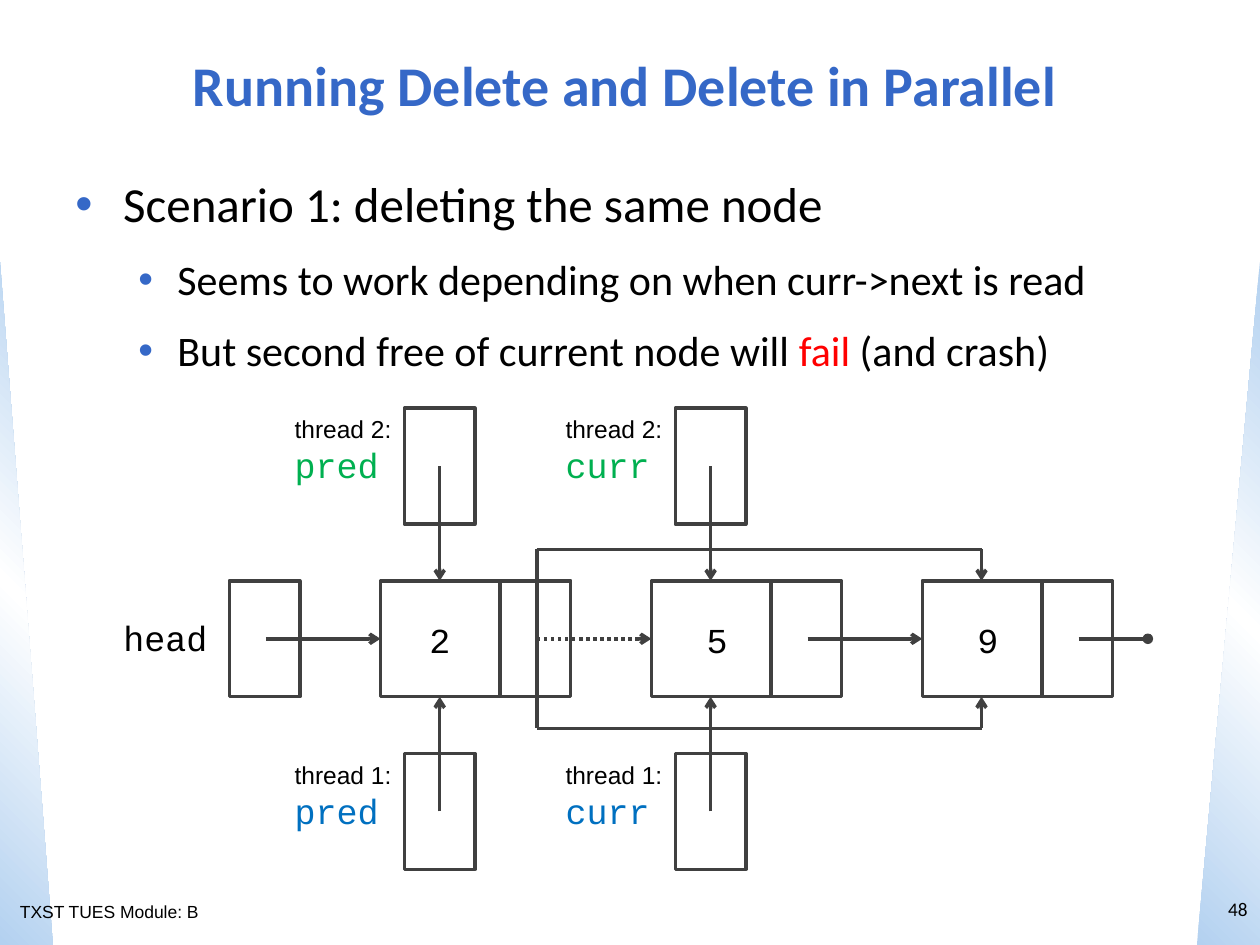
from lxml import etree
from pptx import Presentation
from pptx.dml.color import RGBColor
from pptx.enum.dml import MSO_LINE
from pptx.enum.shapes import MSO_CONNECTOR, MSO_SHAPE
from pptx.enum.text import MSO_ANCHOR, PP_ALIGN
from pptx.oxml import parse_xml
from pptx.oxml.ns import nsdecls, qn
from pptx.util import Inches, Pt

BLACK = RGBColor(0x00, 0x00, 0x00)
TITLE_BLUE = RGBColor(0x35, 0x68, 0xC7)
RED = RGBColor(0xFF, 0x00, 0x00)
GREEN = RGBColor(0x00, 0xB0, 0x50)
THREAD_BLUE = RGBColor(0x00, 0x70, 0xC0)
OUTLINE = RGBColor(0x40, 0x40, 0x40)
PALE_BLUE = RGBColor(0xB3, 0xD1, 0xF0)
WHITE = RGBColor(0xFF, 0xFF, 0xFF)

# List geometry in inches
DATA_W, POINTER_W, CELL_H = 0.95, 0.56, 0.92
NODE_STEP = 2.15
NEXT_X = 1.24  # start of a next-pointer, from the left of its node


def add_text(slide, box, *paragraphs, size=20, font="Calibri", color=BLACK,
             bold=False, align=PP_ALIGN.LEFT, anchor=MSO_ANCHOR.TOP, wrap=True):
    """Each paragraph is a list of (text, overrides) runs."""
    frame = slide.shapes.add_textbox(*map(Inches, box)).text_frame
    frame.word_wrap = wrap
    frame.vertical_anchor = anchor
    for index, runs in enumerate(paragraphs):
        paragraph = frame.paragraphs[0] if index == 0 else frame.add_paragraph()
        paragraph.alignment = align
        for text, override in runs:
            run = paragraph.add_run()
            run.text = text
            run.font.size = Pt(override.get("size", size))
            run.font.name = override.get("font", font)
            run.font.color.rgb = override.get("color", color)
            run.font.bold = bold
    return frame


def add_bullet(paragraph, margin, hanging):
    props = paragraph._p.get_or_add_pPr()
    props.set("marL", str(Inches(margin)))
    props.set("indent", str(-Inches(hanging)))
    bullet_color = etree.SubElement(props, qn("a:buClr"))
    etree.SubElement(bullet_color, qn("a:srgbClr"), val=str(TITLE_BLUE))
    etree.SubElement(props, qn("a:buFont"), typeface="Arial")
    etree.SubElement(props, qn("a:buChar"), char="•")


def add_cell(slide, left, top, width=POINTER_W):
    cell = slide.shapes.add_shape(
        MSO_SHAPE.RECTANGLE, *map(Inches, (left, top, width, CELL_H)))
    cell.shadow.inherit = False
    cell.fill.background()
    cell.line.color.rgb = OUTLINE
    cell.line.width = Pt(2)


def add_line(slide, start, end, tip=None, dash=None):
    connector = slide.shapes.add_connector(
        MSO_CONNECTOR.STRAIGHT, *map(Inches, (*start, *end)))
    connector.line.color.rgb = OUTLINE
    connector.line.width = Pt(2)
    if dash:
        connector.line.dash_style = dash
    if tip:
        etree.SubElement(connector.line._get_or_add_ln(), qn("a:tailEnd"), type=tip)
    etree.SubElement(connector._element.spPr, qn("a:effectLst"))


def add_side_wedge(slide, box, angle, flipped=False):
    wedge = slide.shapes.add_shape(MSO_SHAPE.RIGHT_TRIANGLE, *map(Inches, box))
    wedge.shadow.inherit = False
    wedge.line.fill.background()
    wedge.fill.background()
    stops = "".join(
        f'<a:gs pos="{pos}"><a:srgbClr val="{color}"/></a:gs>'
        for pos, color in ((0, PALE_BLUE), (50000, WHITE), (100000, PALE_BLUE)))
    gradient = parse_xml(
        f'<a:gradFill {nsdecls("a")} rotWithShape="1"><a:gsLst>{stops}</a:gsLst>'
        f'<a:lin ang="{angle * 60000}" scaled="0"/></a:gradFill>')
    props = wedge._element.spPr
    props.replace(props.find(qn("a:noFill")), gradient)
    if flipped:
        props.find(qn("a:xfrm")).set("flipH", "1")


def add_body(slide, box):
    body = add_text(
        slide, box,
        [("Scenario 1: deleting the same node", {"size": 28})],
        [("Seems to work depending on when curr->next is read", {})],
        [("But second free of current node will ", {}), ("fail", {"color": RED}),
         (" (and crash)", {})],
        size=24)
    heading, *details = body.paragraphs
    add_bullet(heading, 0.38, 0.38)
    for detail in details:
        add_bullet(detail, 0.81, 0.31)
        detail.level = 1
        detail.space_before = Pt(12)


def add_thread_row(slide, left, top, thread, color, list_edge):
    """Pred and curr of one thread, each pointing at its node."""
    for index, variable in enumerate(("pred", "curr")):
        label_x = left + index * NODE_STEP
        cell_x = label_x + 0.97
        add_text(slide, (label_x, top, 0.97, 0.67),
                 [(f"thread {thread}:", {"size": 14, "font": "Arial"})],
                 [(variable, {"color": color})],
                 font="Courier New", wrap=False)
        add_cell(slide, cell_x, top)
        center = cell_x + POINTER_W / 2
        add_line(slide, (center, top + CELL_H / 2), (center, list_edge), "arrow")


def add_linked_list(slide, left, top):
    """Head pointer, three nodes and the two routes around node 5."""
    middle, bottom = top + CELL_H / 2, top + CELL_H
    first = left + 2.14

    # Head pointer
    add_text(slide, (left, top + 0.23, 0.88, 0.44), [("head", {})],
             font="Courier New", wrap=False)
    add_cell(slide, left + 0.94, top)
    add_line(slide, (left + 1.23, middle), (first, middle), "arrow")

    # Nodes with their next pointers
    nodes = (("2", 0.29, NODE_STEP, "arrow", MSO_LINE.ROUND_DOT),
             ("5", 0.34, NODE_STEP, "arrow", None),
             ("9", 0.34, 1.79, "oval", None))
    for index, (value, value_x, reach, tip, dash) in enumerate(nodes):
        node_x = first + index * NODE_STEP
        add_cell(slide, node_x, top, DATA_W)
        add_cell(slide, node_x + DATA_W, top)
        add_line(slide, (node_x + NEXT_X, middle), (node_x + reach, middle), tip, dash)
        add_text(slide, (node_x + value_x, top + 0.25, 0.37, 0.44), [(value, {})],
                 font="Courier New", wrap=False)

    # Rerouted next pointer of node 2, once for each thread
    start_x, end_x = first + NEXT_X, first + 2 * NODE_STEP + 0.47
    for route_y, edge in ((top - 0.25, top), (bottom + 0.25, bottom)):
        add_line(slide, (start_x, middle), (start_x, route_y))
        add_line(slide, (start_x, route_y), (end_x, route_y))
        add_line(slide, (end_x, route_y), (end_x, edge), "arrow")


def main():
    deck = Presentation()
    deck.slide_width, deck.slide_height = Inches(10), Inches(7.5)
    slide = deck.slides.add_slide(deck.slide_layouts[6])

    # Background wedges and footer
    add_side_wedge(slide, (0, 2.08, 0.42, 5.42), 315)
    add_side_wedge(slide, (9.5, 2.08, 0.5, 5.42), 45, flipped=True)
    add_text(slide, (0.06, 7.1, 1.75, 0.27), [("TXST TUES Module: B", {})],
             size=10, font="Arial")
    add_text(slide, (9.5, 6.92, 0.5, 0.58), [("48", {})], size=11,
             align=PP_ALIGN.RIGHT, anchor=MSO_ANCHOR.MIDDLE)

    # Title and bullets
    add_text(slide, (0.25, 0.25, 9.42, 0.83),
             [("Running Delete and Delete in Parallel", {})], size=32,
             color=TITLE_BLUE, bold=True, align=PP_ALIGN.CENTER,
             anchor=MSO_ANCHOR.MIDDLE)
    add_body(slide, (0.5, 1.33, 9.17, 5.58))

    # Diagram
    list_top = 4.61
    add_linked_list(slide, 0.88, list_top)
    add_thread_row(slide, 2.24, 3.24, 2, GREEN, list_top)
    add_thread_row(slide, 2.24, 5.98, 1, THREAD_BLUE, list_top + CELL_H)

    deck.save("out.pptx")


if __name__ == "__main__":
    main()
